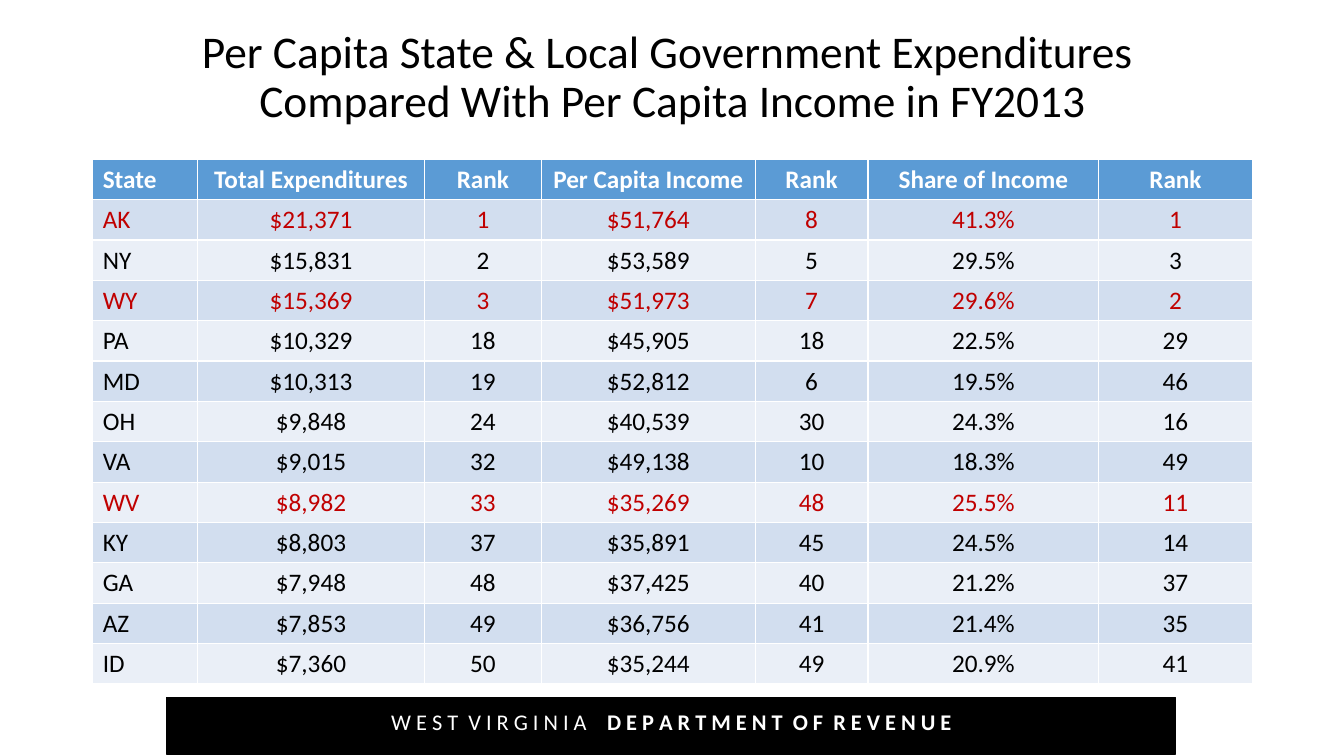
"""Build a slide comparing state spending with income per head."""
from dataclasses import dataclass

import pptx
import pptx.dml.color
import pptx.enum.shapes
import pptx.enum.text
import pptx.util

Inches = pptx.util.Inches
Align = pptx.enum.text.PP_ALIGN
Anchor = pptx.enum.text.MSO_ANCHOR


@dataclass(frozen=True)
class Theme:
    font: str = "Calibri"
    title: float = 32.4
    body: float = 18
    foot: float = 16
    black: str = "000000"
    white: str = "FFFFFF"
    red: str = "C00000"
    head: str = "5B9BD5"
    bands: tuple[str, str] = ("D2DEEF", "EAEFF7")


@dataclass(frozen=True)
class Box:
    left: float
    top: float
    width: float
    height: float

    def place(self) -> tuple:
        return tuple(map(Inches, (self.left, self.top, self.width, self.height)))


@dataclass(frozen=True)
class Column:
    label: str
    width: float
    align: Align = Align.CENTER


@dataclass(frozen=True)
class State:
    code: str
    spend: str
    spend_rank: int
    income: str
    income_rank: int
    share: str
    share_rank: int
    marked: bool = False

    def texts(self) -> list[str]:
        return [self.code, self.spend, str(self.spend_rank), self.income,
                str(self.income_rank), self.share, str(self.share_rank)]


THEME = Theme()
TITLE = ("Per Capita State & Local Government Expenditures ",
         "Compared With Per Capita Income in FY2013")
COLUMNS = [
    Column("State", 1.04, Align.LEFT),
    Column("Total Expenditures", 2.25),
    Column("Rank", 1.16),
    Column("Per Capita Income", 2.12),
    Column("Rank", 1.12),
    Column("Share of Income", 2.29),
    Column("Rank", 1.52),
]
STATES = [
    State("AK", "$21,371", 1, "$51,764", 8, "41.3%", 1, True),
    State("NY", "$15,831", 2, "$53,589", 5, "29.5%", 3),
    State("WY", "$15,369", 3, "$51,973", 7, "29.6%", 2, True),
    State("PA", "$10,329", 18, "$45,905", 18, "22.5%", 29),
    State("MD", "$10,313", 19, "$52,812", 6, "19.5%", 46),
    State("OH", "$9,848", 24, "$40,539", 30, "24.3%", 16),
    State("VA", "$9,015", 32, "$49,138", 10, "18.3%", 49),
    State("WV", "$8,982", 33, "$35,269", 48, "25.5%", 11, True),
    State("KY", "$8,803", 37, "$35,891", 45, "24.5%", 14),
    State("GA", "$7,948", 48, "$37,425", 40, "21.2%", 37),
    State("AZ", "$7,853", 49, "$36,756", 41, "21.4%", 35),
    State("ID", "$7,360", 50, "$35,244", 49, "20.9%", 41),
]


def color(code: str) -> pptx.dml.color.RGBColor:
    return pptx.dml.color.RGBColor.from_string(code)


def paint(item, code: str) -> None:
    item.fill.solid()
    item.fill.fore_color.rgb = color(code)


def add_run(para, text: str, size: float, code: str, bold: bool = False) -> None:
    run = para.add_run()
    run.text = text
    run.font.name = THEME.font
    run.font.size = pptx.util.Pt(size)
    run.font.bold = bold
    run.font.color.rgb = color(code)


def add_text(slide, box: Box, anchor: Anchor):
    frame = slide.shapes.add_textbox(*box.place()).text_frame
    frame.word_wrap = True
    frame.vertical_anchor = anchor
    para = frame.paragraphs[0]
    para.alignment = Align.CENTER
    return para


def add_title(slide) -> None:
    para = add_text(slide, Box(0.92, 0.25, 11.5, 1.06), Anchor.MIDDLE)
    para.line_spacing = 0.9
    first, second = TITLE
    add_run(para, first, THEME.title, THEME.black)
    para.add_line_break()
    add_run(para, second, THEME.title, THEME.black)


def fill_row(table, row: int, texts: list[str], fill: str, ink: str, bold: bool) -> None:
    for index, (column, text) in enumerate(zip(COLUMNS, texts)):
        cell = table.cell(row, index)
        paint(cell, fill)
        para = cell.text_frame.paragraphs[0]
        para.alignment = column.align
        add_run(para, text, THEME.body, ink, bold)


def add_grid(slide) -> None:
    box = Box(0.92, 1.58, 11.5, 5.2)
    table = slide.shapes.add_table(len(STATES) + 1, len(COLUMNS), *box.place()).table
    for index, column in enumerate(COLUMNS):
        table.columns[index].width = Inches(column.width)
    fill_row(table, 0, [column.label for column in COLUMNS], THEME.head, THEME.white, True)
    for index, state in enumerate(STATES):
        ink = THEME.red if state.marked else THEME.black
        fill_row(table, index + 1, state.texts(), THEME.bands[index % 2], ink, False)


def add_footer(slide) -> None:
    kind = pptx.enum.shapes.MSO_SHAPE.RECTANGLE
    bar = slide.shapes.add_shape(kind, *Box(1.65, 6.92, 10.01, 0.56).place())
    bar.shadow.inherit = False
    paint(bar, THEME.black)
    bar.line.color.rgb = color(THEME.black)
    bar.line.width = pptx.util.Pt(1)
    para = add_text(slide, Box(1.66, 6.98, 10, 0.5), Anchor.TOP)
    add_run(para, "W E S T  V I R G I N I A  ", THEME.foot, THEME.white)
    add_run(para, "  D E P A R T M E N T  O F  R E V E N U E", THEME.foot, THEME.white, True)


def main() -> None:
    deck = pptx.Presentation()
    deck.slide_width, deck.slide_height = Inches(13.33), Inches(7.5)
    slide = deck.slides.add_slide(deck.slide_layouts[6])
    add_title(slide)
    add_grid(slide)
    add_footer(slide)
    deck.save("out.pptx")


if __name__ == "__main__":
    main()
